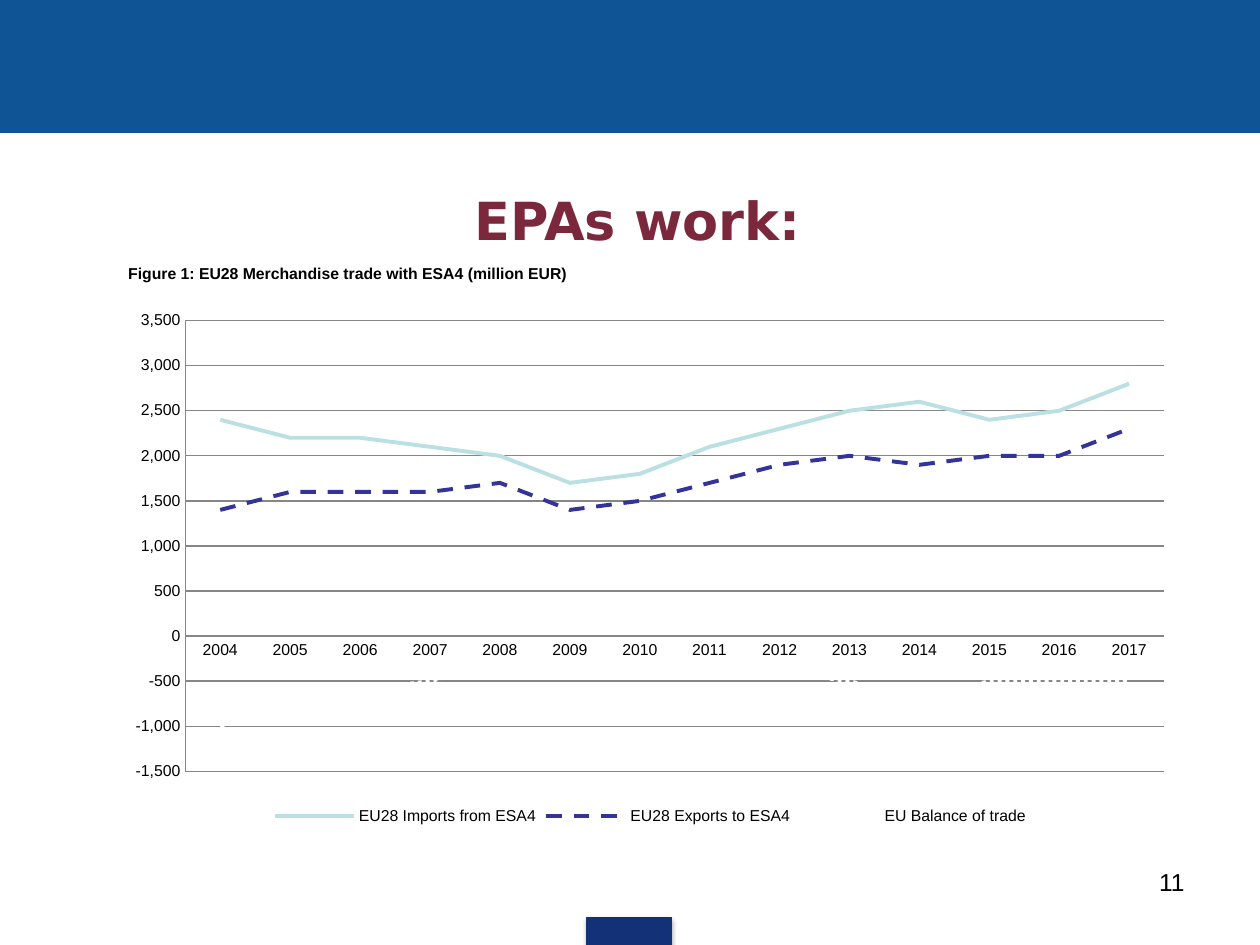
from pptx import Presentation
from pptx.chart.data import CategoryChartData as Data
from pptx.dml.color import RGBColor as RGB
from pptx.enum.chart import XL_CHART_TYPE as Kind, XL_LEGEND_POSITION as Place, XL_TICK_MARK as Tick
from pptx.enum.dml import MSO_LINE as Dash
from pptx.enum.shapes import MSO_SHAPE as Shape
from pptx.enum.text import MSO_ANCHOR as Anchor, PP_ALIGN as Align
from pptx.oxml import parse_xml
from pptx.oxml.ns import nsdecls, qn
from pptx.util import Pt


def tint(code):
    return RGB.from_string(code)


def write(para, text, size=9, face="Arial", color="000000", bold=False):
    run = para.add_run()
    run.text = text
    font = run.font
    font.size, font.name, font.bold = Pt(size), face, bold
    font.color.rgb = tint(color)


def layout(**spots):
    modes = "".join(f'<c:{axis}Mode val="edge"/>' for axis in "xy")
    sizes = "".join(f'<c:{key} val="{val}"/>' for key, val in spots.items())
    target = '<c:layoutTarget val="inner"/>' if "w" in spots else ""
    return parse_xml(f'<c:layout {nsdecls("c")}><c:manualLayout>{target}{modes}{sizes}'
                     '</c:manualLayout></c:layout>')


def clear(node):
    old = node.find(qn("c:layout"))
    if old is not None:
        node.remove(old)


class Maker:
    """Draws styled elements on the current slide."""

    grid = "868686"

    def __init__(self, deck):
        self.slide = deck.slides.add_slide(deck.slide_layouts[6])

    def block(self, left, top, width, height, color, shade=False):
        box = self.slide.shapes.add_shape(
            Shape.RECTANGLE, Pt(left), Pt(top), Pt(width), Pt(height))
        box.shadow.inherit = False
        box.fill.solid()
        box.fill.fore_color.rgb = tint(color)
        box.line.color.rgb = tint(color)
        box.line.width = Pt(0.75)
        if shade:
            glow = parse_xml(
                f'<a:outerShdw {nsdecls("a")} blurRad="{Pt(3.1)}" dist="{Pt(1.8)}" '
                'dir="5400000" rotWithShape="0"><a:srgbClr val="000000">'
                '<a:alpha val="35000"/></a:srgbClr></a:outerShdw>')
            box._element.spPr.find(qn("a:effectLst")).append(glow)

    def label(self, left, top, width, height, text, align, anchor=Anchor.TOP, indent=0, **style):
        box = self.slide.shapes.add_textbox(Pt(left), Pt(top), Pt(width), Pt(height))
        frame = box.text_frame
        frame.word_wrap = True
        frame.vertical_anchor = anchor
        para = frame.paragraphs[0]
        para.alignment = align
        if indent:
            props = para._p.get_or_add_pPr()
            props.set("marL", str(Pt(indent)))
            props.set("indent", "0")
        write(para, text, **style)

    def chart(self, left, top, width, height, title, years, rows):
        data = Data(number_format="#,##0")
        data.categories = years
        for name, vals, *_ in rows:
            data.add_series(name, vals)
        chart = self.slide.shapes.add_chart(
            Kind.LINE, Pt(left), Pt(top), Pt(width), Pt(height), data).chart
        chart.font.size, chart.font.name = Pt(9), "Arial"
        chart.font.color.rgb = tint("000000")
        chart.has_title = True
        write(chart.chart_title.text_frame.paragraphs[0], title, bold=True)
        head = chart.chart_title._element
        clear(head)
        head.find(qn("c:tx")).addnext(layout(x=0.01, y=0.01))
        area = chart._chartSpace.chart.plotArea
        clear(area)
        area.insert(0, layout(x=0.066, y=0.115, w=0.914, h=0.783))
        chart.has_legend = True
        chart.legend.position = Place.BOTTOM
        chart.legend.include_in_layout = False
        self.axes(chart)
        chart.plots[0].vary_by_categories = False
        for line, (_, _, color, dash) in zip(chart.plots[0].series, rows):
            line.smooth = False
            pen = line.format.line
            pen.color.rgb = tint(color)
            pen.width, pen.dash_style = Pt(2.25), dash

    def axes(self, chart):
        cat, val = chart.category_axis, chart.value_axis
        for axis in (cat, val):
            axis.major_tick_mark = axis.minor_tick_mark = Tick.NONE
        cat.format.line.fill.background()
        val.minimum_scale, val.maximum_scale, val.major_unit = -1500, 3500, 500
        val.has_major_gridlines = True
        for pen in (val.format.line, val.major_gridlines.format.line):
            pen.color.rgb = tint(self.grid)
            pen.width = Pt(0.75)
        val.tick_labels.number_format = "#,##0"
        val.tick_labels.number_format_is_linked = False


def main():
    deck = Presentation()
    deck.slide_width, deck.slide_height = Pt(720), Pt(540)
    make = Maker(deck)
    make.block(0, 0, 720, 75.6, "0F5494")
    make.block(335.5, 524.2, 48.2, 15.8, "133176", shade=True)
    make.label(31.7, 88.6, 648, 73.4, "EPAs work: ", Align.CENTER, Anchor.MIDDLE,
               indent=28, size=30, face="DejaVu Sans", color="7C283C", bold=True)
    make.label(516.2, 491.8, 167.8, 37.4, "11", Align.RIGHT, size=14)
    trade = [
        ("EU28 Imports from ESA4",
         (2400, 2200, 2200, 2100, 2000, 1700, 1800, 2100, 2300, 2500, 2600, 2400, 2500, 2800),
         "BBE0E3", Dash.SOLID),
        ("EU28 Exports to ESA4",
         (1400, 1600, 1600, 1600, 1700, 1400, 1500, 1700, 1900, 2000, 1900, 2000, 2000, 2300),
         "333399", Dash.DASH),
        ("EU Balance of trade",
         (-1000, -700, -600, -500, -300, -300, -300, -400, -400, -500, -700, -500, -500, -500),
         "FFFFFF", Dash.ROUND_DOT),
    ]
    make.chart(65.5, 145.4, 612, 329, "Figure 1: EU28 Merchandise trade with ESA4 (million EUR)",
               [str(year) for year in range(2004, 2018)], trade)
    deck.save("out.pptx")


if __name__ == "__main__":
    main()
